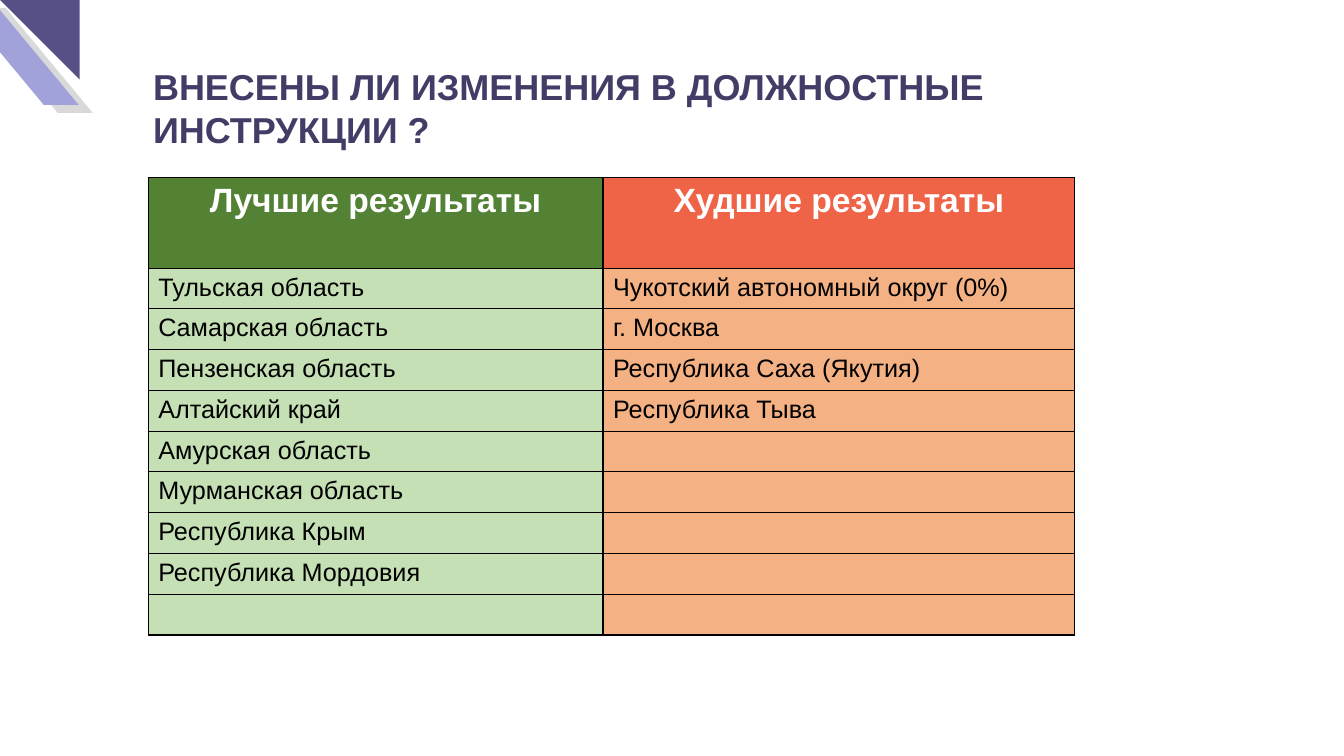
import pptx
import pptx.util
import pptx.dml.color
import pptx.enum.shapes
import pptx.enum.text
import pptx.oxml
import pptx.oxml.ns

Inches, Pt = pptx.util.Inches, pptx.util.Pt
KIND = pptx.enum.shapes.MSO_SHAPE
ALIGN = pptx.enum.text.PP_ALIGN

COLORS = {
    "title": "423D67", "dark": "565087", "light": "A2A2DA", "shade": "D9D9D9",
    "best": "548235", "worst": "EF6347", "green": "C5E0B4", "peach": "F4B183",
    "white": "FFFFFF", "black": "000000",
}
BEST = ["Тульская область", "Самарская область", "Пензенская область",
        "Алтайский край", "Амурская область", "Мурманская область",
        "Республика Крым", "Республика Мордовия", ""]
WORST = ["Чукотский автономный округ (0%)", "г. Москва",
         "Республика Саха (Якутия)", "Республика Тыва"]


class Deck:
    font = "Arial"

    def __init__(self):
        self.prs = pptx.Presentation()
        self.prs.slide_width = Inches(13.33)
        self.prs.slide_height = Inches(7.5)
        self.slide = self.prs.slides.add_slide(self.prs.slide_layouts[6])

    def color(self, name):
        return pptx.dml.color.RGBColor.from_string(COLORS[name])

    def style(self, para, size, color, bold=False):
        para.font.name = self.font
        para.font.size = Pt(size)
        para.font.bold = bold
        para.font.color.rgb = self.color(color)
        for run in para.runs:
            run.font.name = self.font
            run.font.size = Pt(size)
            run.font.bold = bold
            run.font.color.rgb = self.color(color)

    def shape(self, kind, box, color, flips, adjust=None):
        shape = self.slide.shapes.add_shape(kind, *map(Inches, box))
        shape.shadow.inherit = False
        shape.fill.solid()
        shape.fill.fore_color.rgb = self.color(color)
        shape.line.fill.background()
        if adjust is not None:
            shape.adjustments[0] = adjust
        for flip in flips:
            shape.element.spPr.xfrm.set(flip, "1")

    def title(self, text, box, size, lead):
        frame = self.slide.shapes.add_textbox(*map(Inches, box)).text_frame
        frame.word_wrap = True
        frame.text = text
        para = frame.paragraphs[0]
        para.line_spacing = Pt(lead)
        self.style(para, size, "title", True)

    def border(self, cell):
        props = cell._tc.get_or_add_tcPr()
        for index, side in enumerate(("lnL", "lnR", "lnT", "lnB")):
            props.insert(index, pptx.oxml.parse_xml(
                f'<a:{side} {pptx.oxml.ns.nsdecls("a")} w="12700"><a:solidFill>'
                f'<a:srgbClr val="{COLORS["black"]}"/></a:solidFill></a:{side}>'))

    def table(self, box, widths, head, cols):
        count = len(cols[0][2]) + 1
        table = self.slide.shapes.add_table(
            count, len(cols), *map(Inches, box)).table
        for col, width in zip(table.columns, widths):
            col.width = Inches(width)
        for row in table.rows:
            row.height = Inches((box[3] - head) / (count - 1))
        table.rows[0].height = Inches(head)
        for x, (top, body, texts) in enumerate(cols):
            for y in range(count):
                cell = table.cell(y, x)
                cell.text = texts[y - 1] if 0 < y <= len(texts) else ""
                cell.fill.solid()
                cell.fill.fore_color.rgb = self.color(body if y else top[1])
                para = cell.text_frame.paragraphs[0]
                if y:
                    self.style(para, 18, "black")
                else:
                    cell.text = top[0]
                    para = cell.text_frame.paragraphs[0]
                    para.alignment = ALIGN.CENTER
                    self.style(para, 24, "white", True)
                self.border(cell)


def main():
    deck = Deck()

    # Corner ornament
    for left, top, color in ((-0.29, 0.08, "shade"), (-0.43, 0, "light")):
        deck.shape(KIND.PARALLELOGRAM, (left, top, 1.21, 1.04), color,
                   ["flipH"], 0.83)
    deck.shape(KIND.RIGHT_TRIANGLE, (0, 0, 0.79, 0.79), "dark",
               ["flipH", "flipV"])

    # Results by region
    deck.table((1.47, 1.76, 9.19, 4.54), (4.51, 4.68), 0.9, [
        (("Лучшие результаты", "best"), "green", BEST),
        (("Худшие результаты", "worst"), "peach", WORST),
    ])

    # Heading
    deck.title("ВНЕСЕНЫ ЛИ ИЗМЕНЕНИЯ В ДОЛЖНОСТНЫЕ ИНСТРУКЦИИ ?",
               (1.42, 0.59, 9.14, 0.96), 25.7, 30.9)

    deck.prs.save("out.pptx")


if __name__ == "__main__":
    main()
